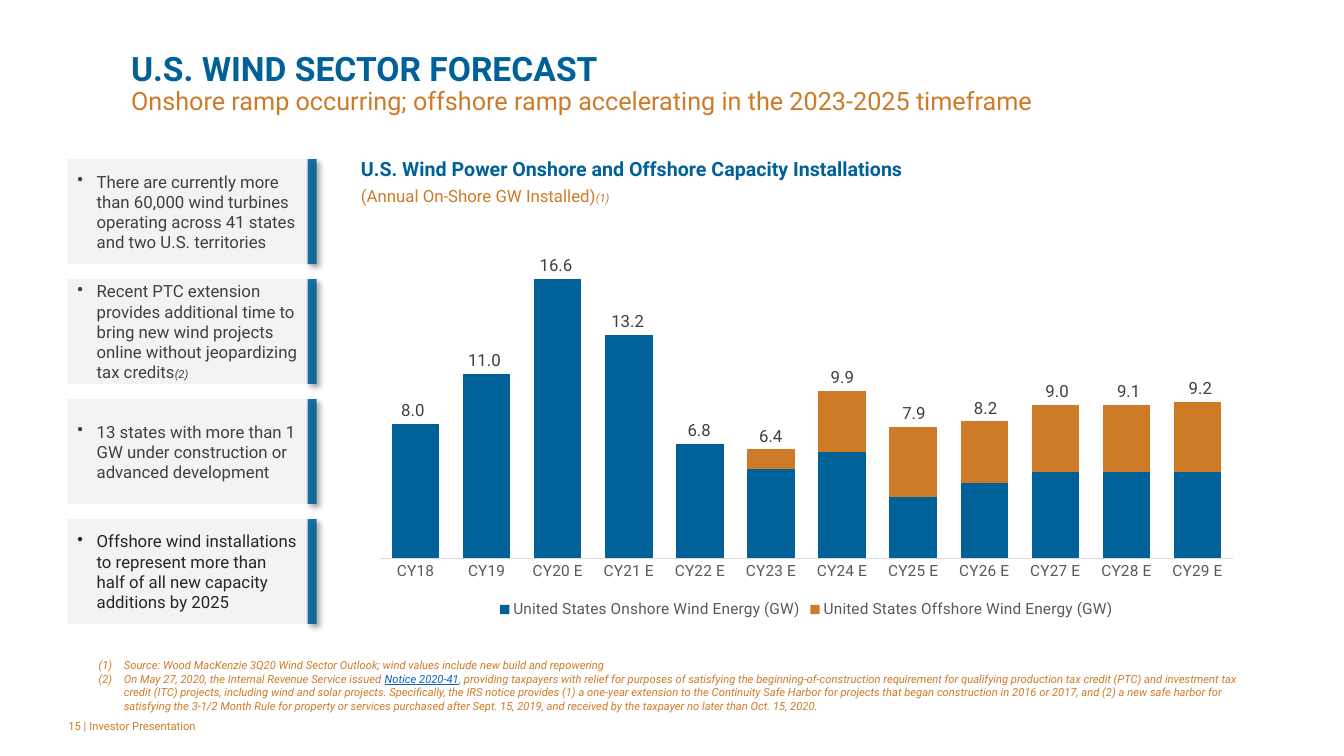
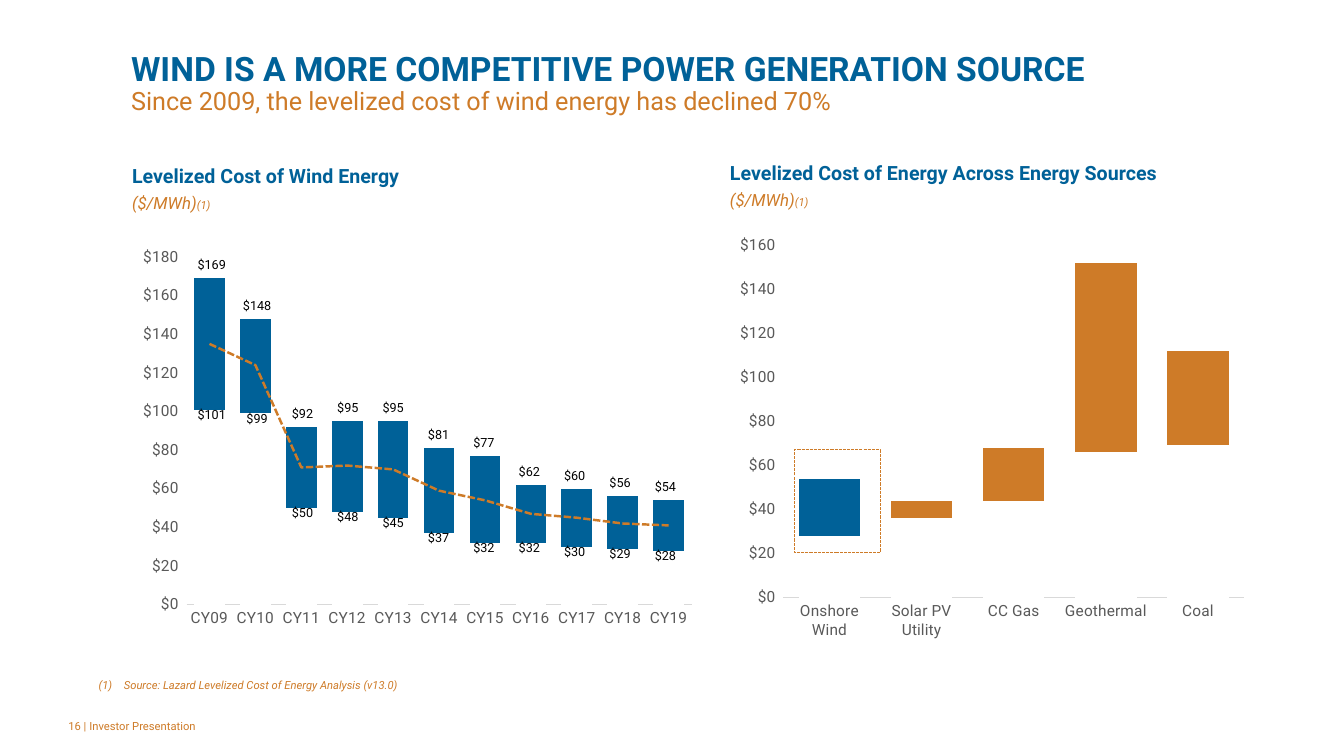
from lxml import etree
from pptx import Presentation
from pptx.chart.data import CategoryChartData
from pptx.dml.color import RGBColor
from pptx.enum import chart as ch, dml, shapes, text as tx
from pptx.oxml import parse_xml
from pptx.oxml.ns import nsdecls, qn
from pptx.util import Inches, Pt

FONT = "Roboto"
BLUE, ORANGE, WHITE, BLACK = "006198", "CE7B28", "FFFFFF", "000000"
CARD, CARD_TEXT, DARK_TEXT = "F2F2F2", "404040", "262626"
AXIS_TEXT, AXIS_LINE, LINK = "595959", "D9D9D9", "0563C1"
DOLLARS = r'"$"#,##0_);\("$"#,##0\)'
REF = {"size": 8, "italic": True}

# Places are left, top, width, height in inches.
TITLE_AT = (1.3, 0.52, 10.81, 0.63)
NOTES_AT = (0.88, 6.6, 11.65, 0.4)
FOOTER_AT = (0.58, 7, 3, 0.4)
HIGHLIGHT_AT = (7.88, 4.46, 0.85, 1.02)
CARD_LEFT, CARD_TOP, CARD_WIDTH, CARD_HEIGHT = 0.67, 1.58, 2.38, 1.04
CARD_PITCH, ACCENT_WIDTH = 1.19, 0.09

CARDS = [
    ([("There are currently more than 60,000 wind turbines operating across "
       "41 states and two U.S. territories", {})], CARD_TEXT),
    ([("Recent PTC extension provides additional time to bring new wind projects "
       "online without jeopardizing tax credits", {}), ("(2)", REF)], CARD_TEXT),
    ([("13 states with more than 1 GW under construction or advanced development",
       {})], CARD_TEXT),
    ([("Offshore wind installations to represent more than half of all new "
       "capacity additions by 2025", {})], DARK_TEXT),
]
FORECAST_NOTES = [
    [("Source: Wood MacKenzie 3Q20 Wind Sector Outlook; wind values include new "
      "build and repowering", {})],
    [("On May 27, 2020, the Internal Revenue Service issued ", {}),
     ("Notice 2020-41", {"color": LINK, "underline": True}),
     (", providing taxpayers with relief for purposes of satisfying the "
      "beginning-of-construction requirement for qualifying production tax credit "
      "(PTC) and investment tax credit (ITC) projects, including wind and solar "
      "projects. Specifically, the IRS notice provides (1) a one-year extension to "
      "the Continuity Safe Harbor for projects that began construction in 2016 or "
      "2017, and (2) a new safe harbor for satisfying the 3-1/2 Month Rule for "
      "property or services purchased after Sept. 15, 2019, and received by the "
      "taxpayer no later than Oct. 15, 2020.", {})],
]
COST_NOTES = [[("Source: Lazard Levelized Cost of Energy Analysis (v13.0)", {})]]

# "at" is the chart frame, "plot" the area inside the axes, "top" the axis maximum.
FORECAST = {
    "at": (3.58, 2.46, 8.84, 3.72), "plot": (3.77, 2.77, 8.46, 2.77), "top": 100,
    "cats": ["CY18", "CY19"] + [f"CY{year} E" for year in range(20, 30)],
    "series": [
        ("United States Onshore Wind Energy (GW)", BLUE,
         [48, 66, 100, 80, 41, 32, 38, 22, 27, 31, 31, 31]),
        ("United States Offshore Wind Energy (GW)", ORANGE,
         [0, 0, 0, 0, 0, 7, 22, 25, 22, 24, 24, 25]),
    ],
}
CAPACITY = ["8.0", "11.0", "16.6", "13.2", "6.8", "6.4",
            "9.9", "7.9", "8.2", "9.0", "9.1", "9.2"]
WIND_COST = {
    "at": (1.3, 2.38, 5.66, 3.94), "plot": (1.85, 2.55, 5.01, 3.45), "top": 180,
    "cats": [f"CY{year:02}" for year in range(9, 20)],
    "series": [
        ("Low", WHITE, [101, 99, 50, 48, 45, 37, 32, 32, 30, 29, 28]),
        ("Range", BLUE, [68, 49, 42, 47, 50, 44, 45, 30, 30, 27, 26]),
        ("Average", ORANGE, [135, 124, 71, 72, 70, 59, 54, 47, 45, 42, 41]),
    ],
}
SOURCE_COST = {
    "at": (7.24, 2.25, 5.2, 4.19), "plot": (7.77, 2.43, 4.57, 3.5), "top": 160,
    "cats": ["Onshore Wind", "Solar PV Utility", "CC Gas", "Geothermal", "Coal"],
    "series": [("Low", WHITE, [28, 36, 44, 66, 69]),
               ("Range", ORANGE, [26, 8, 24, 86, 43])],
}


def rgb(value):
    return RGBColor.from_string(value)


def box(at):
    return [Inches(length) for length in at]


def paint(fill, color):
    fill.solid()
    fill.fore_color.rgb = rgb(color)


def draw_line(line, color, width, dash=None):
    line.color.rgb, line.width = rgb(color), Pt(width)
    if dash:
        line.dash_style = dash


def style(font, size=12, color=CARD_TEXT, bold=False, italic=False, underline=None):
    font.name, font.size, font.color.rgb = FONT, Pt(size), rgb(color)
    font.bold, font.italic, font.underline = bold, italic, underline


def add_bullet(para, bullet, indent):
    """Hang a bullet character, or a running (1) when bullet is "number"."""
    props = para._p.get_or_add_pPr()
    props.set("marL", str(Inches(indent)))
    props.set("indent", str(-Inches(indent)))
    if bullet == "number":
        etree.SubElement(props, qn("a:buAutoNum"), type="arabicParenBoth")
    else:
        etree.SubElement(props, qn("a:buChar"), char=bullet)


def write(frame, paragraphs, align=tx.PP_ALIGN.LEFT, anchor=tx.MSO_ANCHOR.TOP,
          inset=None, bullet=None, indent=0, after=None, spacing=None, **font):
    """Fill a frame with paragraphs, each a list of (text, own font format)."""
    frame.word_wrap, frame.vertical_anchor = True, anchor
    if inset is not None:
        frame.margin_left = frame.margin_top = Inches(inset)
        frame.margin_right = frame.margin_bottom = Inches(inset)
    for number, runs in enumerate(paragraphs):
        para = frame.add_paragraph() if number else frame.paragraphs[0]
        if bullet:
            add_bullet(para, bullet, indent)
        para.alignment = align
        if after:
            para.space_after = Pt(after)
        if spacing:
            para.line_spacing = spacing
        for words, own in runs:
            if words == "\n":
                para.add_line_break()
                continue
            run = para.add_run()
            run.text = words
            style(run.font, **{**font, **own})


def add_text(slide, at, paragraphs, **form):
    write(slide.shapes.add_textbox(*box(at)).text_frame, paragraphs, **form)


def add_rectangle(slide, at):
    rectangle = slide.shapes.add_shape(shapes.MSO_SHAPE.RECTANGLE, *box(at))
    rectangle.shadow.inherit = False
    return rectangle


def add_panel(slide, at, color):
    """Add a slightly see-through rectangle without an outline."""
    panel = add_rectangle(slide, at)
    paint(panel.fill, color)
    panel.line.fill.background()
    shade = panel._element.spPr.find(".//" + qn("a:srgbClr"))
    etree.SubElement(shade, qn("a:alpha"), val="90000")
    return panel


def cast_shadow(shape):
    shape._element.spPr.find(qn("a:effectLst")).append(parse_xml(
        f'<a:outerShdw {nsdecls("a")} blurRad="{Pt(4)}" dist="{Pt(3)}" '
        'dir="2700000" algn="tl" rotWithShape="0"><a:srgbClr val="000000">'
        '<a:alpha val="40000"/></a:srgbClr></a:outerShdw>'))


def add_heading(slide, at, title, unit, italic=False):
    add_text(slide, at, [
        [(title, {"size": 14, "color": BLUE, "bold": True})],
        [(unit, {"italic": italic}), ("(1)", REF)],
    ], inset=0, after=3.3, color=ORANGE)


def add_cards(slide):
    for row, (runs, color) in enumerate(CARDS):
        top = CARD_TOP + CARD_PITCH * row
        card = add_panel(slide, (CARD_LEFT, top, CARD_WIDTH, CARD_HEIGHT), CARD)
        write(card.text_frame, [runs], anchor=tx.MSO_ANCHOR.MIDDLE,
              bullet="•", indent=0.19, color=color)
        accent = add_panel(slide, (CARD_LEFT + CARD_WIDTH, top, ACCENT_WIDTH,
                                   CARD_HEIGHT), BLUE)
        cast_shadow(accent)


def fix_plot(chart, at, plot):
    """Pin the area inside the axes to a place on the slide."""
    shares = {"x": (plot[0] - at[0]) / at[2], "y": (plot[1] - at[1]) / at[3],
              "w": plot[2] / at[2], "h": plot[3] / at[3]}
    area = chart._chartSpace.chart.plotArea
    for old in area.findall(qn("c:layout")):
        area.remove(old)
    layout = etree.Element(qn("c:layout"))
    manual = etree.SubElement(layout, qn("c:manualLayout"))
    etree.SubElement(manual, qn("c:layoutTarget"), val="inner")
    for side in "xy":
        etree.SubElement(manual, qn(f"c:{side}Mode"), val="edge")
    for side, share in shares.items():
        etree.SubElement(manual, qn(f"c:{side}"), val=f"{share:.4f}")
    area.insert(0, layout)


def last_series_to_line(chart, color):
    """Move the last column series into a dashed line on the same axes."""
    columns = chart._chartSpace.chart.plotArea.find(qn("c:barChart"))
    series = columns.findall(qn("c:ser"))[-1]
    for flag in series.findall(qn("c:invertIfNegative")):
        series.remove(flag)
    lines = parse_xml(f'<c:lineChart {nsdecls("c")}><c:grouping val="standard"/>'
                      '<c:varyColors val="0"/><c:marker val="1"/></c:lineChart>')
    lines.insert(2, series)
    for axis in columns.findall(qn("c:axId")):
        etree.SubElement(lines, qn("c:axId"), val=axis.get("val"))
    columns.addnext(lines)
    average = chart.plots[1].series[0]
    average.smooth = False
    average.marker.style = ch.XL_MARKER_STYLE.NONE
    draw_line(average.format.line, color, 1.75, dml.MSO_LINE.SQUARE_DOT)


def format_axes(chart, top, step):
    """Show dollars at every step, or hide the value axis if there is none."""
    categories, values = chart.category_axis, chart.value_axis
    categories.major_tick_mark = values.major_tick_mark = ch.XL_TICK_MARK.NONE
    draw_line(categories.format.line, AXIS_LINE, 0.75)
    values.minimum_scale, values.maximum_scale = 0, top
    values.has_major_gridlines = False
    values.format.line.fill.background()
    values.visible = step is not None
    if step:
        values.major_unit = step
        values.tick_labels.number_format = DOLLARS
        values.tick_labels.number_format_is_linked = False


def add_columns(slide, content, step=None, legend=False, line=False):
    """Add stacked columns, with the last series as a line if asked."""
    data = CategoryChartData()
    data.categories = content["cats"]
    for name, _, values in content["series"]:
        data.add_series(name, values)
    chart = slide.shapes.add_chart(ch.XL_CHART_TYPE.COLUMN_STACKED,
                                   *box(content["at"]), data).chart
    style(chart.font, 11, AXIS_TEXT)
    chart.has_title = False
    columns = chart.plots[0]
    columns.gap_width, columns.overlap, columns.vary_by_categories = 50, 100, False
    if line:
        last_series_to_line(chart, content["series"][-1][1])
    for series, (_, color, _) in zip(columns.series, content["series"]):
        paint(series.format.fill, color)
    format_axes(chart, content["top"], step)
    chart.has_legend = legend
    if legend:
        chart.legend.position = ch.XL_LEGEND_POSITION.BOTTOM
        chart.legend.include_in_layout = False
        style(chart.legend.font, 11, AXIS_TEXT)
    fix_plot(chart, content["at"], content["plot"])
    return chart


def add_labels(slide, content, labels, values, left, pitch, extent, rise, **font):
    """Label each column; a label's box starts rise inches above its value."""
    _, plot_top, _, plot_height = content["plot"]
    for column, (label, value) in enumerate(zip(labels, values)):
        top = plot_top + plot_height * (1 - value / content["top"]) - rise
        add_text(slide, (left + pitch * column, top, *extent), [[(label, {})]],
                 align=tx.PP_ALIGN.CENTER, **font)


def add_page(deck, number, title, subtitle, notes):
    slide = deck.slides.add_slide(deck.slide_layouts[5])
    write(slide.shapes.title.text_frame,
          [[(title, {"size": 24, "color": BLUE, "bold": True}), ("\n", {}),
            (subtitle, {"size": 18})]],
          anchor=tx.MSO_ANCHOR.BOTTOM, inset=0, spacing=0.9, color=ORANGE)
    add_text(slide, NOTES_AT, notes, anchor=tx.MSO_ANCHOR.MIDDLE, bullet="number",
             indent=0.25, color=ORANGE, **REF)
    add_text(slide, FOOTER_AT, [[(f"{number} | Investor Presentation", {})]],
             anchor=tx.MSO_ANCHOR.MIDDLE, size=8, color=ORANGE)
    return slide


def add_forecast(deck):
    slide = add_page(deck, 15, "U.S. WIND SECTOR FORECAST",
                     "Onshore ramp occurring; offshore ramp accelerating in the "
                     "2023-2025 timeframe", FORECAST_NOTES)
    add_heading(slide, (3.58, 1.56, 5.85, 0.48),
                "U.S. Wind Power Onshore and Offshore Capacity Installations",
                "(Annual On-Shore GW Installed)")
    add_cards(slide)
    add_columns(slide, FORECAST, legend=True)
    totals = map(sum, zip(*(values for _, _, values in FORECAST["series"])))
    add_labels(slide, FORECAST, CAPACITY, totals, left=3.71, pitch=0.71,
               extent=(0.77, 0.3), rise=0.29)


def add_costs(deck):
    slide = add_page(deck, 16, "WIND IS A MORE COMPETITIVE POWER GENERATION SOURCE",
                     "Since 2009, the levelized cost of wind energy has declined 70%",
                     COST_NOTES)
    add_heading(slide, (1.31, 1.63, 5.44, 0.48), "Levelized Cost of Wind Energy",
                "($/MWh)", italic=True)
    add_heading(slide, (7.24, 1.6, 5.69, 0.48),
                "Levelized Cost of Energy Across Energy Sources", "($/MWh)", italic=True)
    sources = add_columns(slide, SOURCE_COST, step=20)
    paint(sources.plots[0].series[1].points[0].format.fill, BLUE)
    add_columns(slide, WIND_COST, step=20, line=True)

    lows, ranges = (values for _, _, values in WIND_COST["series"][:2])
    highs = [low + spread for low, spread in zip(lows, ranges)]
    for costs, rise in ((highs, 0.26), (lows, 0.08)):
        add_labels(slide, WIND_COST, [f"${cost}" for cost in costs], costs, left=1.81,
                   pitch=0.45, extent=(0.58, 0.25), rise=rise, size=9, color=BLACK)

    highlight = add_rectangle(slide, HIGHLIGHT_AT)
    highlight.fill.background()
    draw_line(highlight.line, ORANGE, 0.75, dml.MSO_LINE.SQUARE_DOT)


def main():
    deck = Presentation()
    deck.slide_width, deck.slide_height = Inches(13.33), Inches(7.5)
    title = deck.slide_layouts[5].placeholders[0]
    title.left, title.top, title.width, title.height = box(TITLE_AT)
    title.text_frame.auto_size = tx.MSO_AUTO_SIZE.NONE
    add_forecast(deck)
    add_costs(deck)
    deck.save("out.pptx")


if __name__ == "__main__":
    main()
